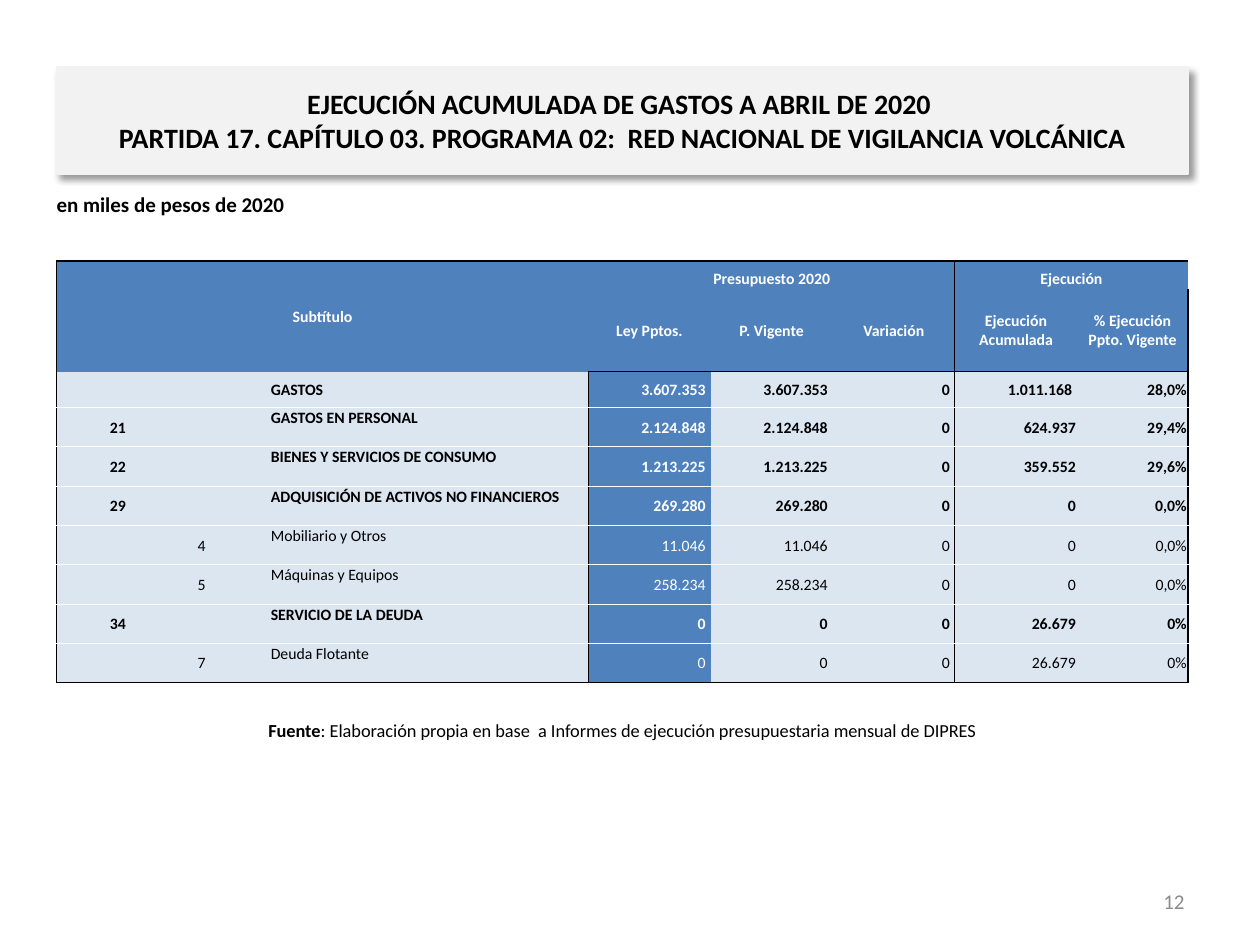
from lxml.etree import SubElement
from pptx import Presentation
from pptx.dml.color import RGBColor
from pptx.enum.text import MSO_ANCHOR, MSO_AUTO_SIZE, PP_ALIGN
from pptx.oxml.ns import qn
from pptx.util import Inches, Pt

THEME = {
    "font": "Calibri",
    "black": "000000", "white": "FFFFFF", "grey": "8C8C8C",
    "panel": "F2F2F2", "header": "4F81BD", "band": "DCE6F1",
    "title": 16, "label": 12, "source": 10.5, "cell": 9,
    "thick": 1, "thin": 0.5,
}

prs = Presentation()
prs.slide_width, prs.slide_height = Inches(10), Inches(7.5)
column, row = prs.slide_width / 100, prs.slide_height / 100
slide = prs.slides.add_slide(prs.slide_layouts[5])


def style(paragraph, size, color, bold=False, align=PP_ALIGN.LEFT):
    paragraph.alignment = align
    for run in paragraph.runs:
        run.font.name = THEME["font"]
        run.font.size = Pt(THEME[size])
        run.font.bold = bold
        run.font.color.rgb = RGBColor.from_string(THEME[color])


def add_border(cell, side, weight, color):
    attributes = {"w": str(Pt(THEME[weight]))} if weight else {}
    edge = SubElement(cell._tc.get_or_add_tcPr(), qn("a:" + side), attributes)
    if weight:
        fill = SubElement(edge, qn("a:solidFill"))
        SubElement(fill, qn("a:srgbClr"), val=THEME[color])
    else:
        SubElement(edge, qn("a:noFill"))


heading = slide.shapes.title
heading.left, heading.top = int(4.5 * column), int(7.1 * row)
heading.width, heading.height = int(89.8 * column), int(11.3 * row)
heading.fill.solid()
heading.fill.fore_color.rgb = RGBColor.from_string(THEME["panel"])
heading.line.color.rgb = RGBColor.from_string(THEME["panel"])
heading.line.width = Pt(0.75)
effects = SubElement(heading._element.spPr, qn("a:effectLst"))
shadow = SubElement(effects, qn("a:outerShdw"), blurRad=str(Pt(4)), dist=str(Pt(3)),
                    dir=str(45 * 60000), algn="tl", rotWithShape="0")
shade = SubElement(shadow, qn("a:srgbClr"), val=THEME["black"])
SubElement(shade, qn("a:alpha"), val="40000")
heading.text_frame.text = (
    "EJECUCIÓN ACUMULADA DE GASTOS A ABRIL DE 2020 \v"
    "PARTIDA 17. CAPÍTULO 03. PROGRAMA 02:  RED NACIONAL DE VIGILANCIA VOLCÁNICA"
)
heading.text_frame.auto_size = MSO_AUTO_SIZE.NONE
heading.text_frame.vertical_anchor = MSO_ANCHOR.MIDDLE
style(heading.text_frame.paragraphs[0], "title", "black", True, PP_ALIGN.CENTER)

captions = [
    ("en miles de pesos de 2020", (3.5, 19.6, 81.9, 5.2), "label", "black",
     True, PP_ALIGN.LEFT, MSO_ANCHOR.TOP),
    ("Fuente", (4.5, 75.2, 89.8, 4.1), "source", "black",
     True, PP_ALIGN.CENTER, MSO_ANCHOR.MIDDLE),
    ("12", (71.7, 92.7, 23.3, 5.3), "label", "grey",
     False, PP_ALIGN.RIGHT, MSO_ANCHOR.MIDDLE),
]
for text, (left, top, width, height), size, color, bold, align, anchor in captions:
    caption = slide.shapes.add_textbox(int(left * column), int(top * row),
                                       int(width * column), int(height * row))
    caption.text_frame.word_wrap = True
    caption.text_frame.vertical_anchor = anchor
    paragraph = caption.text_frame.paragraphs[0]
    paragraph.text = text
    if text == "Fuente":
        paragraph.add_run().text = (
            ": Elaboración propia en base  a Informes de ejecución "
            "presupuestaria mensual de DIPRES"
        )
    style(paragraph, size, color, bold, align)
    for detail in paragraph.runs[1:]:
        detail.font.bold = False

headers = [
    ["Subtítulo", "", "", "", "Presupuesto 2020", "", "", "Ejecución", ""],
    ["", "", "", "", "Ley Pptos.", "P. Vigente", "Variación",
     "Ejecución Acumulada", "% Ejecución Ppto. Vigente"],
]
expenses = [
    ["", "", "", "GASTOS", "3.607.353", "3.607.353", "0", "1.011.168", "28,0%"],
    ["21", "", "", "GASTOS EN PERSONAL", "2.124.848", "2.124.848", "0", "624.937", "29,4%"],
    ["22", "", "", "BIENES Y SERVICIOS DE CONSUMO", "1.213.225", "1.213.225", "0", "359.552", "29,6%"],
    ["29", "", "", "ADQUISICIÓN DE ACTIVOS NO FINANCIEROS", "269.280", "269.280", "0", "0", "0,0%"],
    ["", "4", "", "Mobiliario y Otros", "11.046", "11.046", "0", "0", "0,0%"],
    ["", "5", "", "Máquinas y Equipos", "258.234", "258.234", "0", "0", "0,0%"],
    ["34", "", "", "SERVICIO DE LA DEUDA", "0", "0", "0", "26.679", "0%"],
    ["", "7", "", "Deuda Flotante", "0", "0", "0", "26.679", "0%"],
]
entries = headers + expenses
widths = [9.7, 3.6, 3.6, 25.3] + [9.7] * 4 + [8.8]
heights = [2.93, 8.8, 3.8] + [4.16] * 7
budget = slide.shapes.add_table(
    len(entries), len(widths), int(4.5 * column), int(27.6 * row),
    int(sum(widths) * column), int(sum(heights) * row)).table
for index, width in enumerate(widths):
    budget.columns[index].width = int(width * column)
for index, height in enumerate(heights):
    budget.rows[index].height = int(height * row)

vertical = {0: ("thick", "black"), 4: ("thin", "black"),
            7: ("thin", "black"), 9: ("thick", "black")}
horizontal = {0: ("thick", "black"), 1: (None, None),
              2: ("thin", "black"), 10: ("thick", "black")}
for r, values in enumerate(entries):
    for c, value in enumerate(values):
        cell = budget.cell(r, c)
        is_header = r < len(headers)
        on_blue = is_header or c == 4
        padded = not is_header and (c in (4, 5, 6) or value == "1.011.168")
        cell.margin_left = cell.margin_top = Inches(0.01)
        cell.margin_right = Inches(0.04 if padded else 0.01)
        cell.margin_bottom = 0
        cell.vertical_anchor = MSO_ANCHOR.MIDDLE
        if r == 0 and c > 3:
            cell.vertical_anchor = MSO_ANCHOR.BOTTOM
        elif r > 2 and c == 3:
            cell.vertical_anchor = MSO_ANCHOR.TOP
        for side, edge in (("lnL", vertical.get(c, (None, None))),
                           ("lnR", vertical.get(c + 1, (None, None))),
                           ("lnT", horizontal.get(r, ("thin", "white"))),
                           ("lnB", horizontal.get(r + 1, ("thin", "white")))):
            add_border(cell, side, *edge)
        cell.fill.solid()
        cell.fill.fore_color.rgb = RGBColor.from_string(
            THEME["header" if on_blue else "band"])
        paragraph = cell.text_frame.paragraphs[0]
        if value:
            paragraph.text = value
        align = PP_ALIGN.CENTER if is_header or c < 3 else (
            PP_ALIGN.LEFT if c == 3 else PP_ALIGN.RIGHT)
        style(paragraph, "cell", "white" if on_blue else "black",
              is_header or not values[1], align)
        SubElement(paragraph._p, qn("a:endParaRPr"), sz=str(THEME["cell"] * 100))

for first, last in (((0, 0), (1, 3)), ((0, 4), (0, 6)), ((0, 7), (0, 8))):
    budget.cell(*first).merge(budget.cell(*last))

prs.save("out.pptx")
